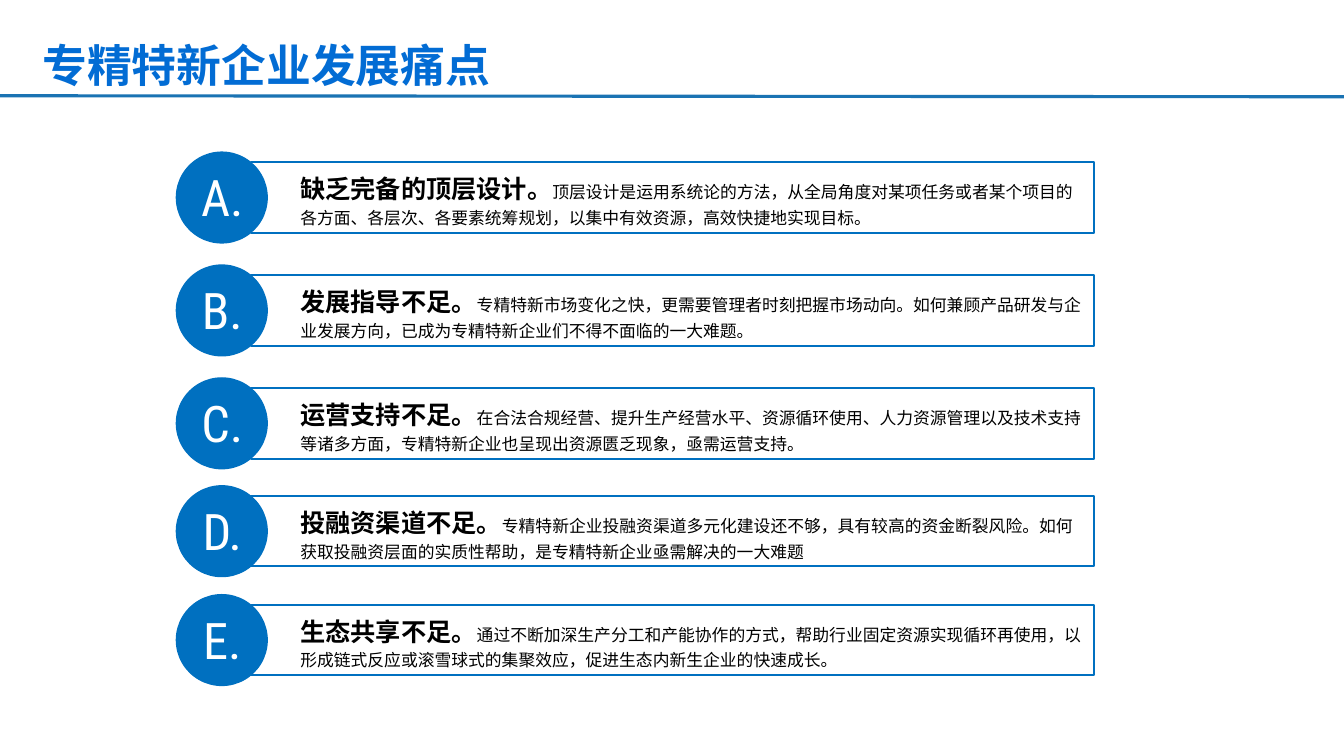
from lxml import etree
from pptx import Presentation
from pptx.dml.color import RGBColor
from pptx.enum.shapes import MSO_CONNECTOR, MSO_SHAPE
from pptx.enum.text import MSO_ANCHOR, PP_ALIGN
from pptx.oxml.ns import qn
from pptx.util import Inches, Pt

RECT, OVAL = MSO_SHAPE.RECTANGLE, MSO_SHAPE.OVAL
STRAIGHT = MSO_CONNECTOR.STRAIGHT
MIDDLE, BOTTOM = MSO_ANCHOR.MIDDLE, MSO_ANCHOR.BOTTOM
LEFT, CENTER = PP_ALIGN.LEFT, PP_ALIGN.CENTER

WIDTH, HEIGHT = 13.33, 7.5
BLUE = RGBColor(0x00, 0x70, 0xC0)
TITLE = RGBColor(0x02, 0x6C, 0xD4)
RULE = RGBColor(0x1A, 0x73, 0xB3)
BLACK = RGBColor(0, 0, 0)
WHITE = RGBColor(0xFF, 0xFF, 0xFF)
HAN, LATIN = "Noto Sans CJK SC", "Roboto Condensed"

# Left edge, width and height of the bars; the disc overlaps their left end
BAR_X, BAR_W, BAR_H = 2.49, 8.36, 0.7
DISC_X, DISC = 1.75, 0.9

# Top of the bar, heading, detail
POINTS = [
    (1.61, "缺乏完备的顶层设计。",
     "顶层设计是运用系统论的方法，从全局角度对某项任务或者某个项目的各方面、各层次、"
     "各要素统筹规划，以集中有效资源，高效快捷地实现目标。"),
    (2.73, "发展指导不足。",
     "专精特新市场变化之快，更需要管理者时刻把握市场动向。如何兼顾产品研发与企业发展方向，"
     "已成为专精特新企业们不得不面临的一大难题。"),
    (3.85, "运营支持不足。",
     "在合法合规经营、提升生产经营水平、资源循环使用、人力资源管理以及技术支持等诸多方面，"
     "专精特新企业也呈现出资源匮乏现象，亟需运营支持。"),
    (4.92, "投融资渠道不足。",
     "专精特新企业投融资渠道多元化建设还不够，具有较高的资金断裂风险。"
     "如何获取投融资层面的实质性帮助，是专精特新企业亟需解决的一大难题"),
    (6.0, "生态共享不足。",
     "通过不断加深生产分工和产能协作的方式，帮助行业固定资源实现循环再使用，"
     "以形成链式反应或滚雪球式的集聚效应，促进生态内新生企业的快速成长。"),
]


def box(*sizes):
    return [Inches(size) for size in sizes]


def style(run, size, color, face, bold=False):
    """Format a run, setting its face for Chinese text too."""
    font = run.font
    font.size, font.bold, font.name = Pt(size), bold, face
    font.color.rgb = color
    east = etree.SubElement(run._r.get_or_add_rPr(), qn("a:ea"))
    east.set("typeface", face)


def add_title(slide, text):
    frame = slide.shapes.add_textbox(*box(0.32, 0.35, 10.41, 0.61)).text_frame
    frame.word_wrap = True
    frame.vertical_anchor = BOTTOM
    frame.text = text
    para = frame.paragraphs[0]
    para.line_spacing = 0.9
    style(para.runs[0], 32, TITLE, HAN, True)


def add_rule(slide):
    rule = slide.shapes.add_connector(STRAIGHT, *box(0, 0.95, WIDTH, 0.96))
    rule.line.color.rgb = RULE
    rule.line.width = Pt(2.25)
    etree.SubElement(rule._element.spPr, qn("a:effectLst"))


def add_shape(shapes, kind, place, line):
    shape = shapes.add_shape(kind, *box(*place))
    shape.shadow.inherit = False
    shape.line.color.rgb = BLUE
    shape.line.width = Pt(line)
    return shape


def add_bar(slide, top, head, body):
    bar = add_shape(slide.shapes, RECT, (BAR_X, top, BAR_W, BAR_H), 1.5)
    bar.fill.background()
    frame = bar.text_frame
    frame.word_wrap = True
    frame.vertical_anchor = MIDDLE
    para = frame.paragraphs[0]
    para.alignment = LEFT
    para.line_spacing = 1.2
    para._p.get_or_add_pPr().set("marL", str(Inches(0.39)))
    for text, size, bold in ((head, 18, True), (body, 12, False)):
        run = para.add_run()
        run.text = text
        style(run, size, BLACK, HAN, bold)


def add_badge(slide, top, mark):
    """Group a disc, centred on its bar, with its letter."""
    shapes = slide.shapes.add_group_shape().shapes
    edge = top - (DISC - BAR_H) / 2
    disc = add_shape(shapes, OVAL, (DISC_X, edge, DISC, DISC), 1)
    disc.fill.solid()
    disc.fill.fore_color.rgb = BLUE
    frame = shapes.add_textbox(*box(1.92, top, 0.57, 0.68)).text_frame
    frame.word_wrap = False
    frame.margin_left = frame.margin_right = Inches(0.07)
    frame.margin_top = frame.margin_bottom = Inches(0.04)
    frame.text = mark
    para = frame.paragraphs[0]
    para.alignment = CENTER
    style(para.runs[0], 36, WHITE, LATIN)


def main():
    deck = Presentation()
    deck.slide_width, deck.slide_height = box(WIDTH, HEIGHT)
    slide = deck.slides.add_slide(deck.slide_layouts[6])
    add_rule(slide)
    add_title(slide, "专精特新企业发展痛点")
    for letter, (top, head, body) in zip("ABCDE", POINTS):
        add_bar(slide, top, head, body)
        add_badge(slide, top, f"{letter}.")
    deck.save("out.pptx")


if __name__ == "__main__":
    main()
